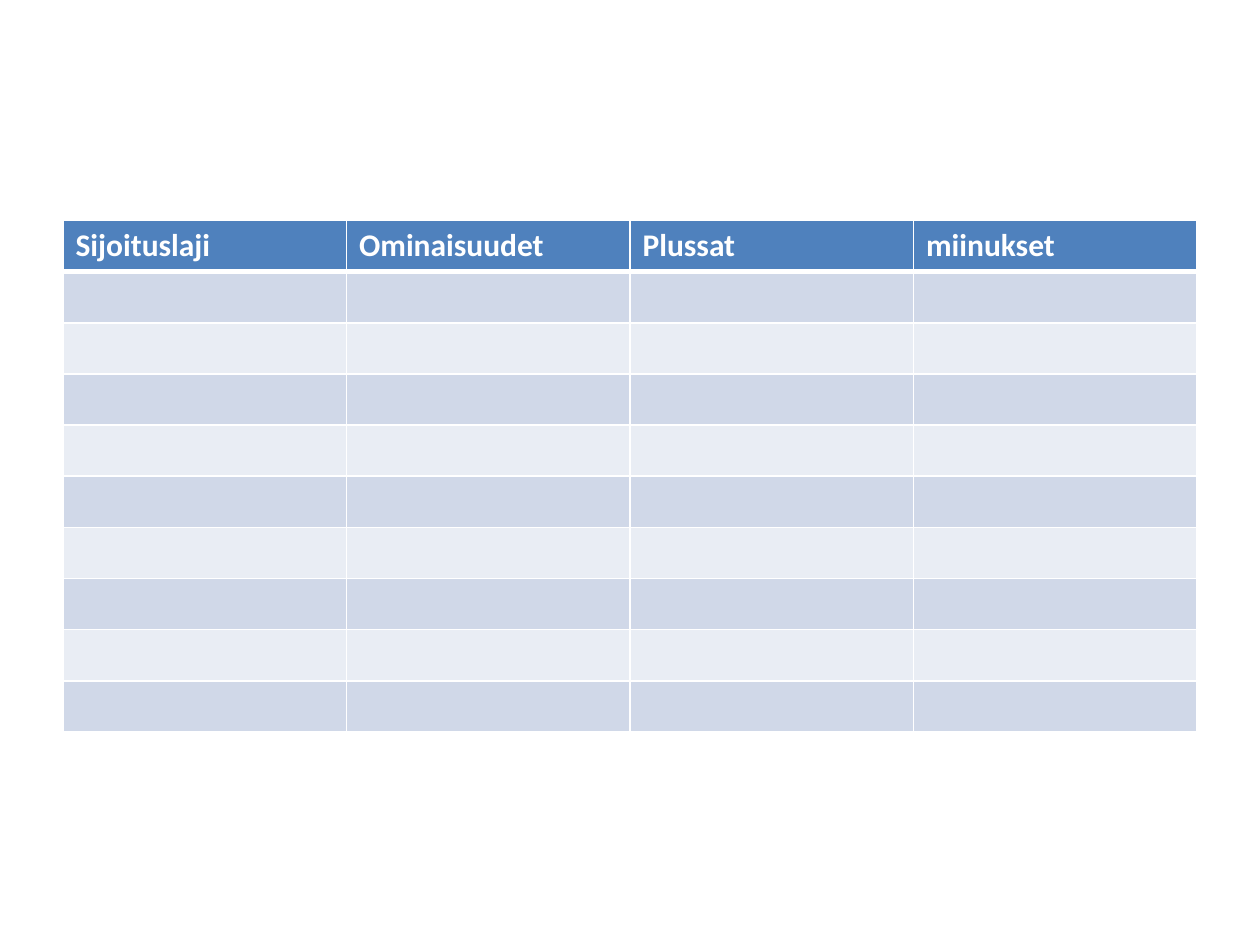
from dataclasses import dataclass

from lxml.etree import SubElement
from pptx import Presentation
from pptx.dml.color import RGBColor
from pptx.oxml.ns import qn
from pptx.table import _Cell as Cell
from pptx.util import Inches, Pt

COLORS = {"header": "4F81BD", "odd": "D0D8E8", "even": "E9EDF4", "white": "FFFFFF"}
HEADINGS = ("Sijoituslaji", "Ominaisuudet", "Plussat", "miinukset")
BODY_ROWS = 9


@dataclass(frozen=True)
class RowStyle:
    fill: str
    top: int = 1
    bottom: int = 1


HEADER = RowStyle("header", bottom=3)
FIRST = RowStyle("odd", top=3)
ODD = RowStyle("odd")
EVEN = RowStyle("even")


def row_style(row: int) -> RowStyle:
    if row < 2:
        return (HEADER, FIRST)[row]
    return ODD if row % 2 else EVEN


def style_cell(cell: Cell, style: RowStyle) -> None:
    """Borders go in before the fill, as the schema orders them."""
    properties = cell._tc.get_or_add_tcPr()
    for side, width in (("L", 1), ("R", 1), ("T", style.top), ("B", style.bottom)):
        line = SubElement(properties, qn(f"a:ln{side}"), w=str(Pt(width)))
        solid = SubElement(line, qn("a:solidFill"))
        SubElement(solid, qn("a:srgbClr"), val=COLORS["white"])
    cell.fill.solid()
    cell.fill.fore_color.rgb = RGBColor.from_string(COLORS[style.fill])


def write_heading(cell: Cell, text: str) -> None:
    cell.text = text
    font = cell.text_frame.paragraphs[0].font
    font.name, font.size, font.bold = "Calibri", Pt(18), True
    font.color.rgb = RGBColor.from_string(COLORS["white"])


def main() -> None:
    deck = Presentation()
    deck.slide_width, deck.slide_height = Inches(10), Inches(7.5)
    page = deck.slides.add_slide(deck.slide_layouts[6])
    table = page.shapes.add_table(
        BODY_ROWS + 1, len(HEADINGS),
        Inches(0.5), Inches(1.75), Inches(9), Inches(4.06),
    ).table
    for index, row in enumerate(table.rows):
        for cell in row.cells:
            style_cell(cell, row_style(index))
    for cell, text in zip(table.rows[0].cells, HEADINGS):
        write_heading(cell, text)
    deck.save("out.pptx")


if __name__ == "__main__":
    main()
